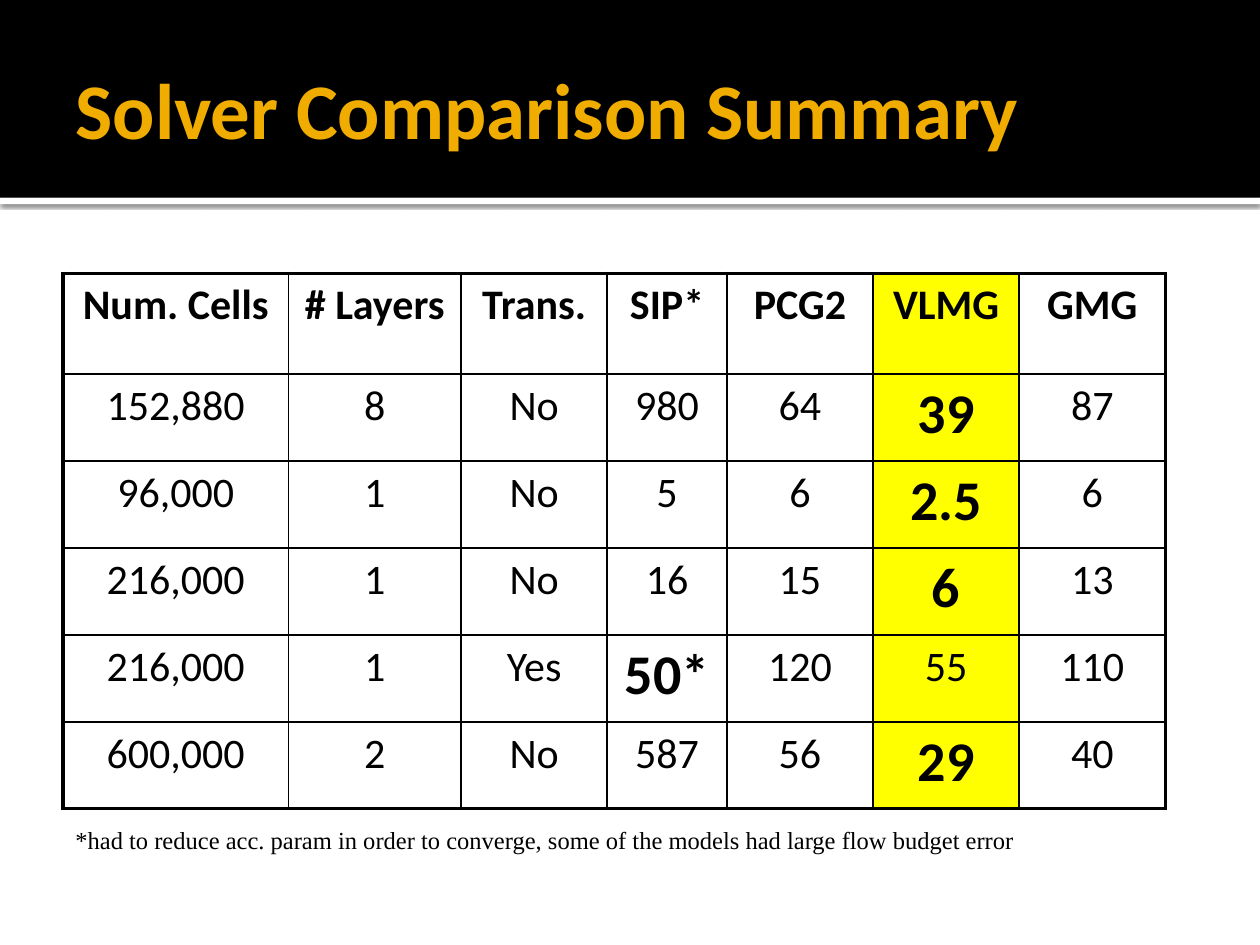
from dataclasses import dataclass

from lxml.etree import SubElement
from pptx import Presentation
from pptx.dml.color import RGBColor
from pptx.enum.shapes import MSO_SHAPE
from pptx.enum.text import MSO_ANCHOR, PP_ALIGN
from pptx.oxml import parse_xml
from pptx.oxml.ns import nsdecls, qn
from pptx.util import Inches, Pt


@dataclass(frozen=True)
class Theme:
    black: RGBColor = RGBColor(0x00, 0x00, 0x00)
    white: RGBColor = RGBColor(0xFF, 0xFF, 0xFF)
    gold: RGBColor = RGBColor(0xF0, 0xAD, 0x00)
    yellow: RGBColor = RGBColor(0xFF, 0xFF, 0x00)
    font: str = "Calibri"
    note_font: str = "Times New Roman"
    title: Pt = Pt(45)
    body: Pt = Pt(24)
    best: Pt = Pt(32)
    note: Pt = Pt(14)
    inner_line: Pt = Pt(1)
    outer_line: Pt = Pt(2.25)


theme = Theme()


def style(p, font, size, color, bold=False):
    p.font.name = font
    p.font.size = size
    p.font.color.rgb = color
    p.font.bold = bold


def add_border(cell, side, width):
    ln = SubElement(cell._tc.get_or_add_tcPr(), qn(f"a:ln{side}"), w=str(int(width)))
    fill = SubElement(ln, qn("a:solidFill"))
    SubElement(fill, qn("a:srgbClr"), val=str(theme.black))


prs = Presentation()
prs.slide_width, prs.slide_height = Inches(10), Inches(7.5)
s = prs.slides.add_slide(prs.slide_layouts[5])

for top, height, color in [(1.57, 0.05, theme.white), (0, 1.57, theme.black)]:
    sp = s.shapes.add_shape(MSO_SHAPE.RECTANGLE, 0, Inches(top), Inches(10), Inches(height))
    sp.shadow.inherit = False
    sp.fill.solid()
    sp.fill.fore_color.rgb = color
    sp.line.fill.background()
    if color == theme.white:
        effects = sp._element.spPr.find(qn("a:effectLst"))
        effects.append(parse_xml(
            f'<a:outerShdw {nsdecls("a")} blurRad="{Pt(2.5)}" dist="{Pt(0.8)}" dir="5400000" rotWithShape="0">'
            f'<a:srgbClr val="{theme.black}"><a:alpha val="60000"/></a:srgbClr></a:outerShdw>'))

title = s.shapes.title
s.shapes._spTree.append(title._element)
title.left, title.top, title.width, title.height = Inches(0.5), Inches(0.17), Inches(9), Inches(1.37)
tf = title.text_frame
tf.text = "Solver Comparison Summary"
tf.vertical_anchor = MSO_ANCHOR.MIDDLE
tf.margin_left = Inches(0.1)
tf.margin_right = tf.margin_top = tf.margin_bottom = Inches(0.05)
p = tf.paragraphs[0]
p.alignment = PP_ALIGN.LEFT
style(p, theme.font, theme.title, theme.gold, True)

rows = [
    ["Num. Cells", "# Layers", "Trans.", "SIP*", "PCG2", "VLMG", "GMG"],
    ["152,880", "8", "No", "980", "64", "39", "87"],
    ["96,000", "1", "No", "5", "6", "2.5", "6"],
    ["216,000", "1", "No", "16", "15", "6", "13"],
    ["216,000", "1", "Yes", "50*", "120", "55", "110"],
    ["600,000", "2", "No", "587", "56", "29", "40"],
]
best_cells = {(1, 5), (2, 5), (3, 5), (4, 3), (5, 5)}
highlight_col = rows[0].index("VLMG")
last_row, last_col = len(rows) - 1, len(rows[0]) - 1

table = s.shapes.add_table(
    len(rows), len(rows[0]), Inches(0.5), Inches(2.17), Inches(8.75), Inches(4.25)).table
table.first_row = table.horz_banding = False
for column, width in zip(table.columns, [1.79, 1.37, 1.16, 0.95, 1.16, 1.16, 1.16]):
    column.width = Inches(width)
for row, height in zip(table.rows, [0.8] + [0.69] * last_row):
    row.height = Inches(height)

for i, values in enumerate(rows):
    for j, value in enumerate(values):
        cell = table.cell(i, j)
        cell.text = value
        p = cell.text_frame.paragraphs[0]
        p.alignment = PP_ALIGN.CENTER
        best = (i, j) in best_cells
        style(p, theme.font, theme.best if best else theme.body, theme.black, best or i == 0)
        edges = {"L": j == 0, "R": j == last_col, "T": i == 0, "B": i == last_row}
        for side, outer in edges.items():
            add_border(cell, side, theme.outer_line if outer else theme.inner_line)
        if j == highlight_col:
            cell.fill.solid()
            cell.fill.fore_color.rgb = theme.yellow
        else:
            cell.fill.background()

note = s.shapes.add_textbox(Inches(0.5), Inches(6.5), Inches(8), Inches(0.33))
tf = note.text_frame
tf.word_wrap = True
tf.text = "*had to reduce acc. param in order to converge, some of the models had large flow budget error"
style(tf.paragraphs[0], theme.note_font, theme.note, theme.black)

prs.save("out.pptx")
